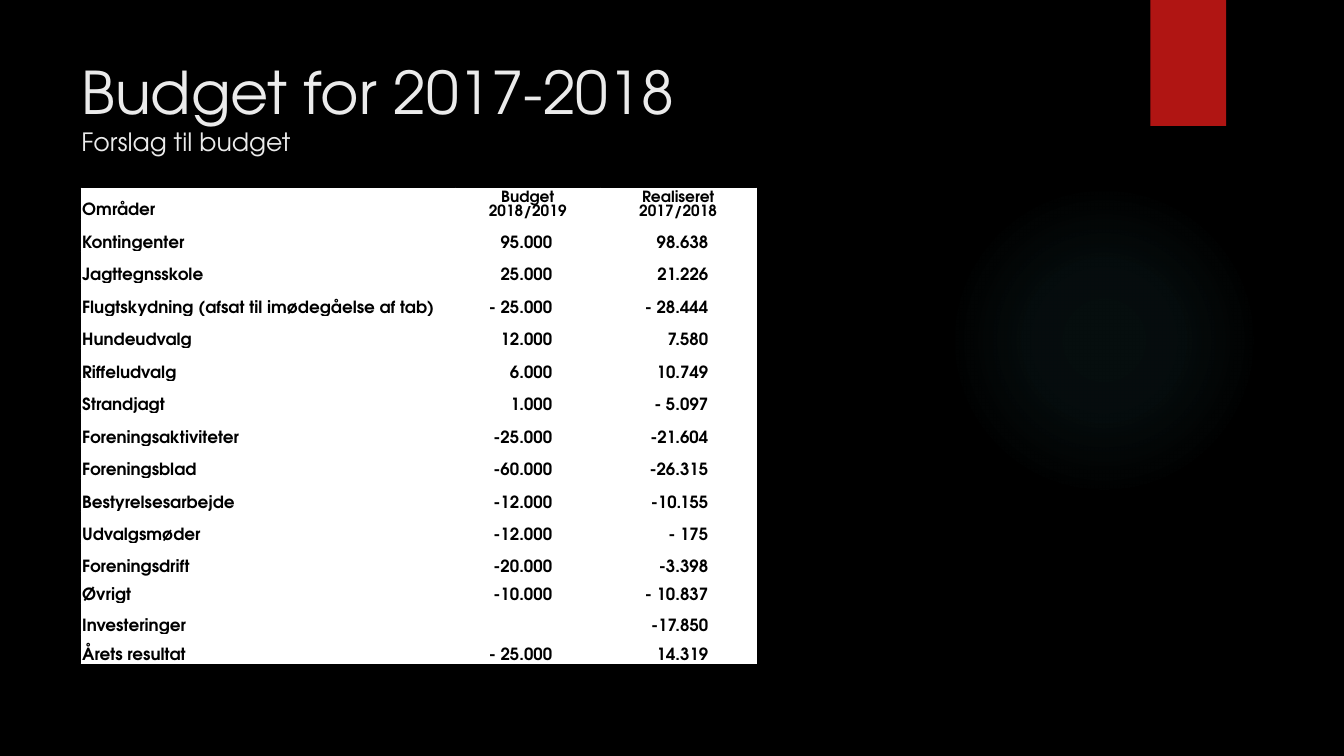
import pptx
import pptx.util
import pptx.dml.color
import pptx.enum.shapes
import pptx.enum.text
import pptx.oxml
import pptx.oxml.ns

Pt = pptx.util.Pt
ALIGN = pptx.enum.text.PP_ALIGN
ANCHOR = pptx.enum.text.MSO_ANCHOR
SHAPE = pptx.enum.shapes.MSO_SHAPE

# Content: area, budget, actual
TITLE = ("Budget for 2017-2018", "Forslag til budget")
HEAD = ("Områder", "Budget\v2018/2019", "Realiseret\v2017/2018")
ROWS = [
    ("Kontingenter", "95.000", "98.638"),
    ("Jagttegnsskole", "25.000", "21.226"),
    ("Flugtskydning (afsat til imødegåelse af tab)", "- 25.000", "- 28.444"),
    ("Hundeudvalg", "12.000", "7.580"),
    ("Riffeludvalg", "6.000", "10.749"),
    ("Strandjagt", "1.000", "- 5.097"),
    ("Foreningsaktiviteter", "-25.000", "-21.604"),
    ("Foreningsblad", "-60.000", "-26.315"),
    ("Bestyrelsesarbejde", "-12.000", "-10.155"),
    ("Udvalgsmøder", "-12.000", "- 175"),
    ("Foreningsdrift", "-20.000", "-3.398"),
    ("Øvrigt", "-10.000", "- 10.837"),
    ("Investeringer", "", "-17.850"),
    ("Årets resultat", "- 25.000", "14.319"),
]

# Theme and layout, in points
THEME = {
    "font": "TeX Gyre Adventor",
    "back": "000000", "title": "EBEBEB", "text": "000000",
    "cell": "FFFFFF", "flag": "B01513", "glow": "50B9C1",
    "big": 42, "sub": 18, "body": 12, "head": 11,
}
COLS = (267, 104, 111)
HIGH = [22] + [23.2] * 11 + [19.4, 22.3, 20.9]
GAPS = (0, 34.5, 34)  # room right of the numbers
GLOW = ((0, 7), (36, 6), (69, 0))  # stop and opacity, percent


def color(name):
    return pptx.dml.color.RGBColor.from_string(THEME[name])


def apply(item, form):
    for key, value in form.items():
        setattr(item, key, value)


def paint(item, name):
    item.fill.solid()
    item.fill.fore_color.rgb = color(name)


def style(font, size, tint, bold=False):
    apply(font, {"name": THEME["font"], "size": Pt(THEME[size]), "bold": bold})
    font.color.rgb = color(tint)


def shape(kind, *box):
    item = slide.shapes.add_shape(kind, *map(Pt, box))
    item.shadow.inherit = False
    item.line.fill.background()
    return item


deck = pptx.Presentation()
apply(deck, {"slide_width": Pt(960), "slide_height": Pt(540)})
slide = deck.slides.add_slide(deck.slide_layouts[6])
paint(slide.background, "back")

# Soft glow
glow = shape(SHAPE.OVAL, 677.5, 131.8, 221.8, 221.8)
stops = "".join(
    f'<a:gs pos="{at * 1000}"><a:srgbClr val="{THEME["glow"]}">'
    f'<a:alpha val="{part * 1000}"/></a:srgbClr></a:gs>' for at, part in GLOW)
fade = pptx.oxml.parse_xml(
    f'<a:gradFill {pptx.oxml.ns.nsdecls("a")}><a:gsLst>{stops}</a:gsLst>'
    '<a:path path="circle"><a:fillToRect l="50000" t="50000" r="50000" b="50000"/>'
    '</a:path></a:gradFill>')
glow.element.spPr.find(pptx.oxml.ns.qn("a:prstGeom")).addnext(fade)

# Red flag
paint(shape(SHAPE.RECTANGLE, 821.8, 0, 54, 90), "flag")

# Title
frame = slide.shapes.add_textbox(*map(Pt, (51, 36, 741, 110))).text_frame
apply(frame, {"word_wrap": True, "vertical_anchor": ANCHOR.TOP})
line = frame.paragraphs[0]
for text, size in zip(TITLE, ("big", "sub")):
    if line.runs:
        line.add_line_break()
    run = line.add_run()
    run.text = text
    style(run.font, size, "title")

# Budget table
table = slide.shapes.add_table(
    len(HIGH), len(COLS), *map(Pt, (58, 134.5, sum(COLS), sum(HIGH)))).table
apply(table, {"first_row": False, "horz_banding": False})
for col, wide in zip(table.columns, COLS):
    col.width = Pt(wide)
for r, (row, high) in enumerate(zip([HEAD] + ROWS, HIGH)):
    table.rows[r].height = Pt(high)
    for c, text in enumerate(row):
        cell = table.cell(r, c)
        paint(cell, "cell")
        label = r == 0 and c > 0
        gap = 0.7 if r == 0 else GAPS[c]
        apply(cell, {"margin_left": Pt(0.7), "margin_right": Pt(gap),
                     "margin_top": Pt(0.7), "margin_bottom": 0,
                     "vertical_anchor": ANCHOR.BOTTOM})
        line = cell.text_frame.paragraphs[0]
        line.text = text
        line.alignment = (ALIGN.CENTER if label else
                          ALIGN.RIGHT if c else ALIGN.LEFT)
        if label:
            line.line_spacing = Pt(10)
        for run in line.runs:
            style(run.font, "head" if label else "body", "text", True)

deck.save("out.pptx")
